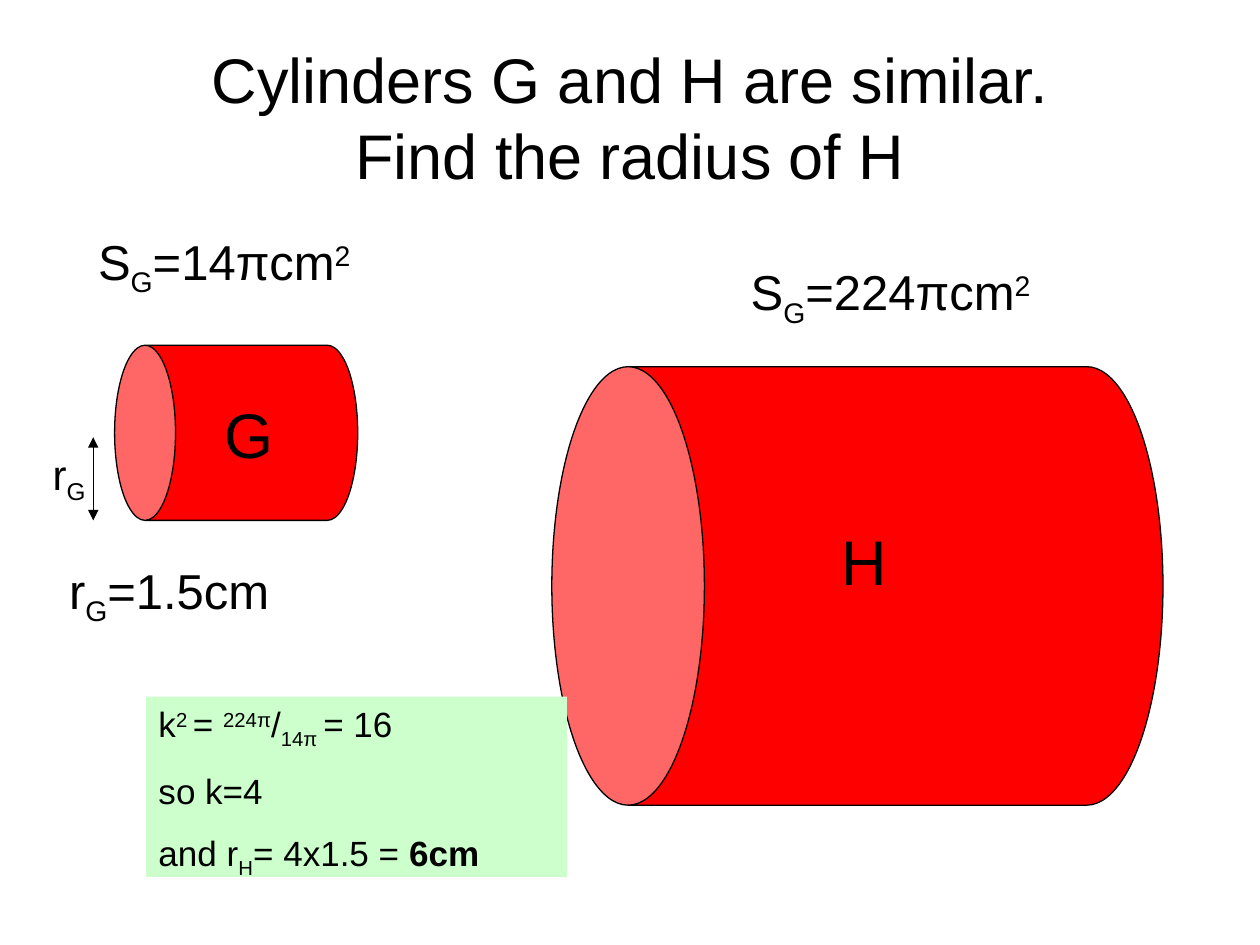
from dataclasses import dataclass

from lxml.etree import SubElement
from pptx import Presentation
from pptx.dml.color import RGBColor
from pptx.enum.shapes import MSO_CONNECTOR as Connector, MSO_SHAPE as Shape
from pptx.enum.text import MSO_ANCHOR as Anchor, MSO_AUTO_SIZE as AutoSize, PP_ALIGN as Align
from pptx.oxml.ns import qn
from pptx.util import Inches, Pt

COLUMNS, ROWS = 100, 75
SLIDE_WIDTH, SLIDE_HEIGHT = Inches(10), Inches(7.5)
SUB, SUPER = -25000, 30000


@dataclass(frozen=True)
class Theme:
    font: str = "Arial"
    ink: RGBColor = RGBColor(0, 0, 0)
    cylinder: RGBColor = RGBColor(0xFF, 0, 0)
    panel: RGBColor = RGBColor(0xCC, 0xFF, 0xCC)
    title: int = 36
    formula: int = 28
    radius: int = 24
    working: int = 20
    line: float = 0.75


THEME = Theme()


@dataclass(frozen=True)
class Box:
    """An area of the slide, in columns and rows of the grid."""
    left: float
    top: float
    width: float
    height: float

    def inner(self, left, top, width, height):
        return Box(self.left + left, self.top + top, width, height)

    def lengths(self):
        column, row = SLIDE_WIDTH / COLUMNS, SLIDE_HEIGHT / ROWS
        return [round(value) for value in (self.left * column, self.top * row,
                                           self.width * column, self.height * row)]


def add_run(paragraph, text, size, baseline=0, bold=False):
    run = paragraph.add_run()
    run.text = text
    run.font.name = THEME.font
    run.font.size = Pt(size)
    run.font.color.rgb = THEME.ink
    if bold:
        run.font.bold = True
    if baseline:
        run.font._element.set("baseline", str(baseline))


def write_lines(frame, lines, size):
    frame.word_wrap = True
    frame.vertical_anchor = Anchor.TOP
    for index, runs in enumerate(lines):
        paragraph = frame.add_paragraph() if index else frame.paragraphs[0]
        paragraph.alignment = Align.LEFT
        if index:
            paragraph.space_before = Pt(11)
        for text, *style in runs:
            add_run(paragraph, text, size, *style)


def add_label(slide, box, runs, size):
    label = slide.shapes.add_textbox(*box.lengths())
    write_lines(label.text_frame, [runs], size)


def add_cylinder(slide, box):
    # The can stands upright before it is turned on its side
    left, top, width, height = box.lengths()
    shift = (width - height) // 2
    can = slide.shapes.add_shape(Shape.CAN, left + shift, top - shift, height, width)
    can.rotation = 270
    can.adjustments[0] = 0.348
    can.shadow.inherit = False
    can.fill.solid()
    can.fill.fore_color.rgb = THEME.cylinder
    can.line.color.rgb = THEME.ink
    can.line.width = Pt(THEME.line)


def add_double_arrow(slide, box):
    left, top, width, height = box.lengths()
    arrow = slide.shapes.add_connector(Connector.STRAIGHT, left, top + height,
                                       left + width, top)
    arrow.line.color.rgb = THEME.ink
    arrow.line.width = Pt(THEME.line)
    for end in ("headEnd", "tailEnd"):
        SubElement(arrow.line._get_or_add_ln(), qn(f"a:{end}"), type="triangle")
    SubElement(arrow._element.spPr, qn("a:effectLst"))


def add_title(slide, box, lines):
    title = slide.shapes.title
    title.left, title.top, title.width, title.height = box.lengths()
    frame = title.text_frame
    frame.auto_size = AutoSize.NONE
    frame.vertical_anchor = Anchor.MIDDLE
    paragraph = frame.paragraphs[0]
    paragraph.alignment = Align.CENTER
    for index, line in enumerate(lines):
        if index:
            paragraph.add_line_break()
        add_run(paragraph, line, THEME.title)


def surface_area(value):
    return [("S",), ("G", SUB), (f"={value}πcm",), ("2", SUPER)]


def add_small_cylinder(slide, box):
    add_cylinder(slide, box.inner(5.9, 9.5, 19.3, 13.9))
    add_label(slide, box.inner(3.6, 0, 28.3, 5.7), surface_area(14), THEME.formula)
    add_label(slide, box.inner(13.6, 13, 28.3, 7), [("G",)], THEME.title)
    # Radius marker and its value
    radius = [("r",), ("G", SUB)]
    add_label(slide, box.inner(0, 17.2, 28.3, 5), radius, THEME.radius)
    add_double_arrow(slide, box.inner(4.2, 16.8, 0, 6.6))
    add_label(slide, box.inner(1.3, 26.1, 28.3, 5.7), radius + [("=1.5cm",)], THEME.formula)


def add_large_cylinder(slide, box):
    add_cylinder(slide, box.inner(0, 8.8, 48.5, 34.8))
    add_label(slide, box.inner(14.8, 0, 28.3, 5.7), surface_area(224), THEME.formula)
    add_label(slide, box.inner(22, 20.7, 28.3, 7), [("H",)], THEME.title)


def add_working(slide, box):
    panel = slide.shapes.add_shape(Shape.RECTANGLE, *box.lengths())
    panel.shadow.inherit = False
    panel.fill.solid()
    panel.fill.fore_color.rgb = THEME.panel
    panel.line.fill.background()
    write_lines(panel.text_frame, [
        [("k",), ("2 ", SUPER), ("= ",), ("224π", SUPER), ("/",), ("14π ", SUB), ("= 16",)],
        [("so k=4",)],
        [("and r",), ("H", SUB), ("= 4x1.5 = ",), ("6cm", 0, True)],
    ], THEME.working)


def main():
    presentation = Presentation()
    presentation.slide_width, presentation.slide_height = SLIDE_WIDTH, SLIDE_HEIGHT
    title_only = presentation.slide_layouts[5]
    slide = presentation.slides.add_slide(title_only)
    add_title(slide, Box(5, 3, 90, 12.5),
              ["Cylinders G and H are similar.", "Find the radius of H"])
    add_small_cylinder(slide, Box(3.2, 17.9, 32, 32))
    add_large_cylinder(slide, Box(43.8, 20.3, 50, 44))
    add_working(slide, Box(11.6, 55.3, 33.4, 14.3))
    presentation.save("out.pptx")


if __name__ == "__main__":
    main()
